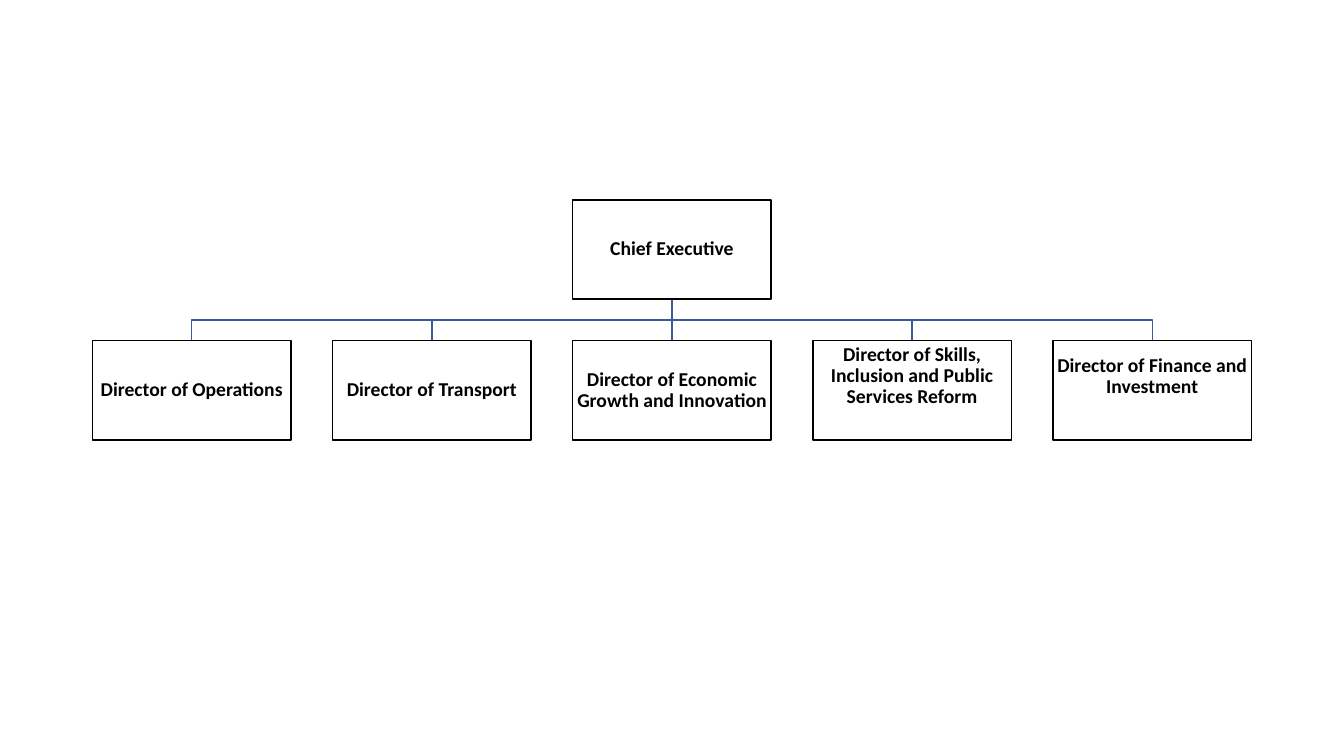
from lxml.etree import SubElement
from pptx import Presentation
from pptx.dml.color import RGBColor
from pptx.enum.shapes import MSO_CONNECTOR, MSO_SHAPE
from pptx.enum.text import MSO_ANCHOR, PP_ALIGN
from pptx.oxml.ns import qn
from pptx.util import Pt

COLOURS = {"border": "000000", "text": "000000", "branch": "365B9D"}
BOX_WIDTH, BOX_HEIGHT = 141.75, 70.88
CENTRE_X, COLUMN_PITCH = 480, 171.52
CHIEF_TOP, DIRECTOR_TOP = 142.8, 243.45
INSET, RAISED_INSET = 0.7, 20.7

# Each director's title and the space kept free below it.
DIRECTORS = [
    ("Director of Operations", INSET),
    ("Director of Transport", INSET),
    ("Director of Economic Growth and Innovation", INSET),
    ("Director of Skills, Inclusion and Public Services Reform", RAISED_INSET),
    ("Director of Finance and Investment", RAISED_INSET),
]


def set_all(target, values):
    for name, value in values.items():
        setattr(target, name, value)


def set_line(shape, colour):
    shape.line.color.rgb = RGBColor.from_string(COLOURS[colour])
    shape.line.width = Pt(1)


def add_box(page, centre_x, top, title, bottom_inset=INSET):
    box = page.shapes.add_shape(
        MSO_SHAPE.RECTANGLE, Pt(centre_x - BOX_WIDTH / 2), Pt(top),
        Pt(BOX_WIDTH), Pt(BOX_HEIGHT))
    box.shadow.inherit = False
    box.fill.background()
    set_line(box, "border")
    set_all(box.text_frame, {
        "word_wrap": True, "vertical_anchor": MSO_ANCHOR.MIDDLE,
        "margin_left": Pt(INSET), "margin_right": Pt(INSET),
        "margin_top": Pt(INSET), "margin_bottom": Pt(bottom_inset)})
    para = box.text_frame.paragraphs[0]
    set_all(para, {"alignment": PP_ALIGN.CENTER, "line_spacing": 0.9})
    span = para.add_run()
    span.text = title
    set_all(span.font, {"name": "Calibri", "size": Pt(14), "bold": True})
    span.font.color.rgb = RGBColor.from_string(COLOURS["text"])


def add_branch(page, centre_x):
    """Join the chief's box to the director's box centred at centre_x."""
    start, end = CHIEF_TOP + BOX_HEIGHT, DIRECTOR_TOP
    if centre_x == CENTRE_X:
        branch = page.shapes.add_connector(
            MSO_CONNECTOR.STRAIGHT, Pt(centre_x), Pt(start), Pt(centre_x), Pt(end))
        SubElement(branch.element.spPr, qn("a:effectLst"))
    else:
        middle = (start + end) / 2
        outline = page.shapes.build_freeform(Pt(CENTRE_X), Pt(start))
        corners = [(CENTRE_X, middle), (centre_x, middle), (centre_x, end)]
        outline.add_line_segments([(Pt(x), Pt(y)) for x, y in corners], close=False)
        branch = outline.convert_to_shape()
        branch.shadow.inherit = False
        branch.fill.background()
    set_line(branch, "branch")


def main():
    deck = Presentation()
    set_all(deck, {"slide_width": Pt(960), "slide_height": Pt(540)})
    page = deck.slides.add_slide(deck.slide_layouts[6])
    middle_index = len(DIRECTORS) // 2
    centres = [CENTRE_X + (index - middle_index) * COLUMN_PITCH
               for index in range(len(DIRECTORS))]
    for centre_x in centres:
        add_branch(page, centre_x)
    add_box(page, CENTRE_X, CHIEF_TOP, "Chief Executive")
    for centre_x, (title, bottom_inset) in zip(centres, DIRECTORS):
        add_box(page, centre_x, DIRECTOR_TOP, title, bottom_inset)
    deck.save("out.pptx")


if __name__ == "__main__":
    main()
